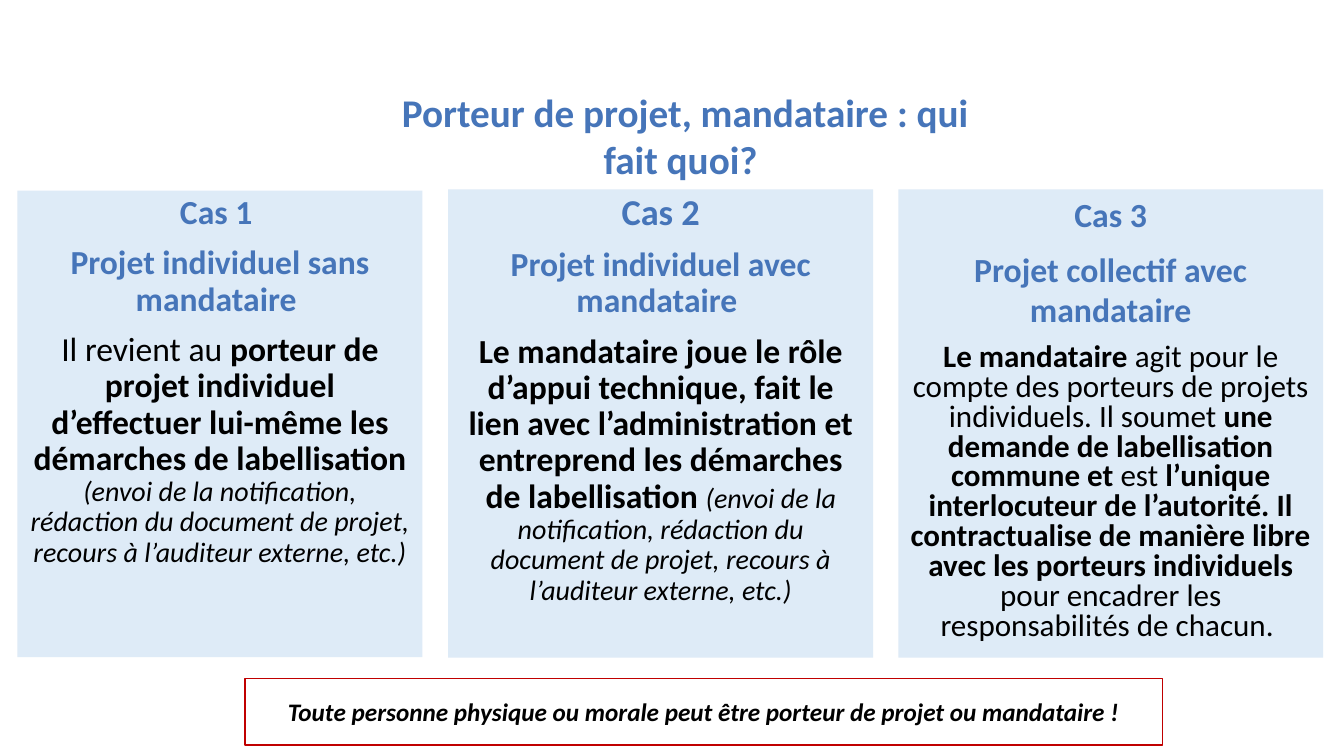
from dataclasses import dataclass

import pptx
import pptx.dml.color
import pptx.enum.shapes
import pptx.enum.text
import pptx.util

Pt = pptx.util.Pt
Anchor = pptx.enum.text.MSO_ANCHOR

COLORS = {"blue": "4675B9", "pale": "DEEBF7", "white": "FFFFFF",
          "black": "000000", "red": "C00000"}


@dataclass
class Run:
    text: str
    size: float
    color: str = "black"
    bold: bool = False
    italic: bool = False


@dataclass
class Para:
    runs: list[Run]
    line: float = 1.0


@dataclass
class Box:
    left: float
    top: float
    width: float
    height: float
    paras: list[Para]
    fill: str = "white"
    edge: str = ""
    anchor: Anchor = Anchor.TOP


def shade(name: str) -> pptx.dml.color.RGBColor:
    return pptx.dml.color.RGBColor.from_string(COLORS[name])


def head(text: str, size: float, line: float = 1.0) -> Para:
    """Make a blue bold heading."""
    return Para([Run(text, size, "blue", True)], line)


def write(para, data: Para, first: bool) -> None:
    layout = {"alignment": pptx.enum.text.PP_ALIGN.CENTER,
              "line_spacing": data.line,
              "space_before": Pt(0 if first else 10)}
    for key, value in layout.items():
        setattr(para, key, value)
    for item in data.runs:
        run = para.add_run()
        run.text = item.text
        style = {"name": "Calibri", "size": Pt(item.size),
                 "bold": item.bold, "italic": item.italic}
        for key, value in style.items():
            setattr(run.font, key, value)
        run.font.color.rgb = shade(item.color)


def draw(slide, box: Box) -> None:
    shape = slide.shapes.add_shape(
        pptx.enum.shapes.MSO_SHAPE.RECTANGLE,
        Pt(box.left), Pt(box.top), Pt(box.width), Pt(box.height))
    shape.shadow.inherit = False
    shape.fill.solid()
    shape.fill.fore_color.rgb = shade(box.fill)
    if box.edge:
        shape.line.color.rgb = shade(box.edge)
        shape.line.width = Pt(1)
    else:
        shape.line.fill.background()
    frame = shape.text_frame
    frame.word_wrap = True
    frame.vertical_anchor = box.anchor
    for index, data in enumerate(box.paras):
        para = frame.add_paragraph() if index else frame.paragraphs[0]
        write(para, data, index == 0)


STEPS = Run("(envoi de la notification, rédaction du document de projet, "
            "recours à l’auditeur externe, etc.)", 20, italic=True)

CASE1 = [
    head("Cas 1 ", 24, 0.9),
    head("Projet individuel sans mandataire ", 24, 0.9),
    Para([Run("Il revient au ", 24),
          Run("porteur de projet individuel d’effectuer lui-même les "
              "démarches de labellisation ", 24, bold=True),
          STEPS], 0.9),
]
CASE2 = [
    head("Cas 2", 26, 0.9),
    head("Projet individuel avec mandataire ", 24, 0.9),
    Para([Run("Le mandataire joue le rôle d’appui technique, fait le lien "
              "avec l’administration et entreprend les démarches de "
              "labellisation ", 24, bold=True),
          STEPS], 0.9),
]
DUTIES = [
    ("Le mandataire ", True),
    ("agit pour le compte des porteurs de projets individuels. "
     "Il soumet ", False),
    ("une demande de labellisation commune et ", True),
    ("est ", False),
    ("l’unique interlocuteur de l’autorité. Il contractualise de manière "
     "libre avec les porteurs individuels ", True),
    ("pour encadrer les responsabilités de chacun. ", False),
]
CASE3 = [
    head("Cas 3", 24.1),
    head("Projet collectif avec mandataire", 24.1),
    Para([Run(text, 22.2, bold=bold) for text, bold in DUTIES], 0.8),
]
TITLE = [head("Porteur de projet, mandataire : qui fait quoi? ", 28)]
NOTE = [Para([Run("Toute personne physique ou morale peut être porteur de "
                  "projet ou mandataire !", 18, bold=True, italic=True)])]

BOXES = [
    Box(275.8, 59.8, 427, 74.9, TITLE),
    Box(12.5, 136.2, 289.3, 333.3, CASE1, "pale"),
    Box(320.2, 135.2, 303.6, 334.6, CASE2, "pale"),
    Box(641.7, 135.2, 303.4, 334.6, CASE3, "pale"),
    Box(175, 484.6, 655.2, 47.5, NOTE, edge="red", anchor=Anchor.MIDDLE),
]


def main() -> None:
    deck = pptx.Presentation()
    deck.slide_width = Pt(960)
    deck.slide_height = Pt(540)
    slide = deck.slides.add_slide(deck.slide_layouts[6])
    for box in BOXES:
        draw(slide, box)
    deck.save("out.pptx")


if __name__ == "__main__":
    main()
